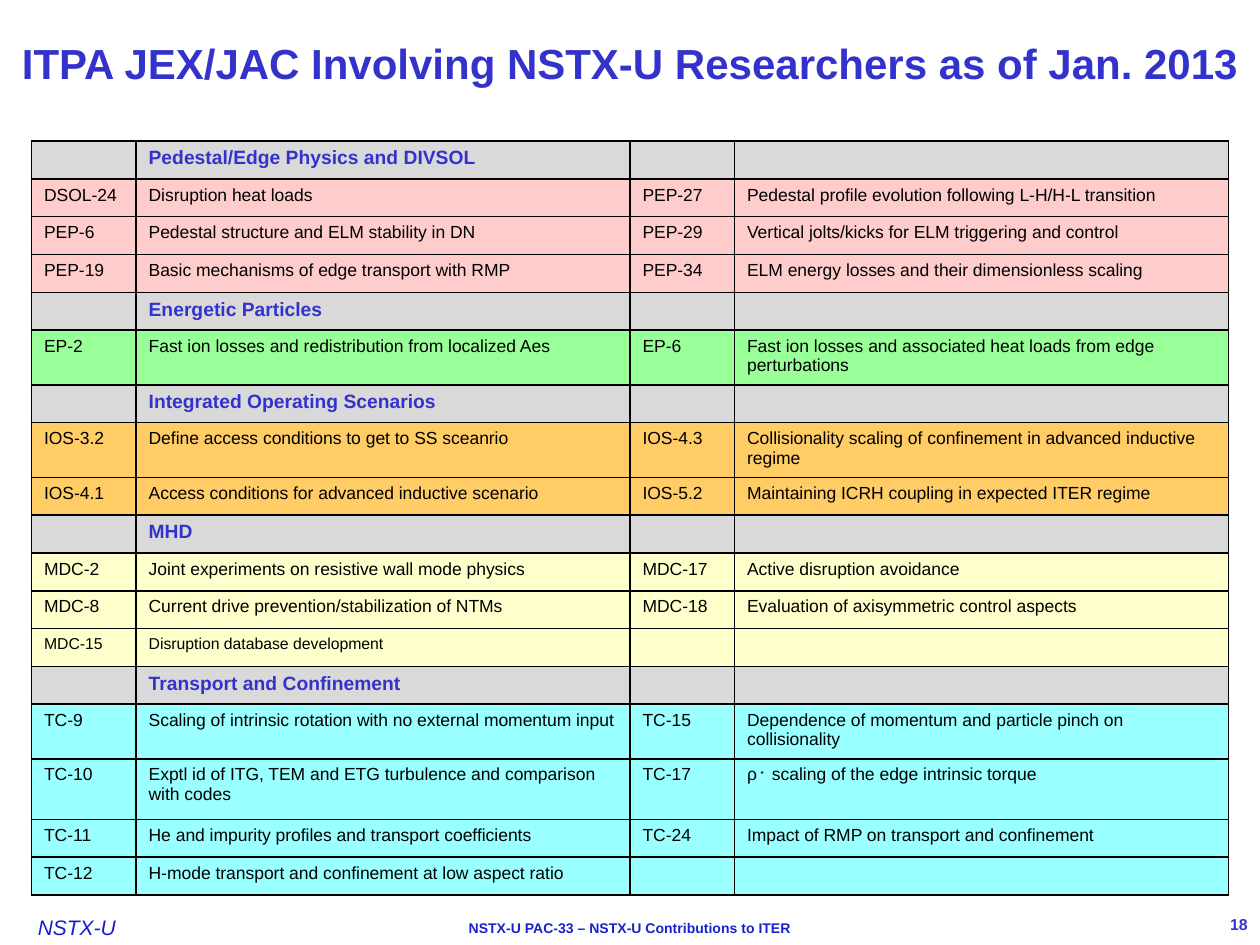
from dataclasses import dataclass

from lxml import etree
from pptx import Presentation
from pptx.dml.color import RGBColor
from pptx.enum import text
from pptx.oxml import ns
from pptx.util import Inches, Pt

FONT = "Arial"
BLACK = RGBColor(0x00, 0x00, 0x00)
HEADING_BLUE = RGBColor(0x33, 0x33, 0xCC)
LOGO_BLUE = RGBColor(0x17, 0x1F, 0xC7)
FOOTER_BLUE = RGBColor(0x18, 0x22, 0xCD)
GREY = RGBColor(0xD9, 0xD9, 0xD9)
PINK = RGBColor(0xFF, 0xCC, 0xCC)
GREEN = RGBColor(0x99, 0xFF, 0x99)
ORANGE = RGBColor(0xFF, 0xCC, 0x66)
YELLOW = RGBColor(0xFF, 0xFF, 0xCC)
CYAN = RGBColor(0x99, 0xFF, 0xFF)

COLUMN_WIDTHS = (0.83, 3.92, 0.83, 3.92)
ROW_HEIGHT = 0.3
TALL_ROWS = {"TC-10": 0.48}
SMALL_ROWS = {"MDC-15": 9}
SUPERSCRIPT = "∗"


@dataclass(frozen=True)
class Style:
    size: float
    color: RGBColor
    bold: bool = False
    italic: bool = False


@dataclass(frozen=True)
class Label:
    words: str
    left: float
    top: float
    width: float
    height: float
    style: Style
    align: text.PP_ALIGN = text.PP_ALIGN.LEFT
    anchor: text.MSO_ANCHOR = text.MSO_ANCHOR.TOP
    inset: bool = True


@dataclass(frozen=True)
class Topic:
    heading: str
    fill: RGBColor
    rows: tuple[tuple[str, str, str, str], ...]


HEADING = Style(11, HEADING_BLUE, bold=True)

LABELS = (
    Label("ITPA JEX/JAC Involving NSTX-U Researchers as of Jan. 2013", 0, 0, 10, 1,
          Style(24, HEADING_BLUE, bold=True), text.PP_ALIGN.CENTER, text.MSO_ANCHOR.MIDDLE),
    Label("NSTX-U", 0.3, 7.26, 0.87, 0.2, Style(12, LOGO_BLUE, italic=True), inset=False),
    Label("NSTX-U PAC-33 – NSTX-U Contributions to ITER", 2, 7.25, 6, 0.24,
          Style(8, FOOTER_BLUE, bold=True), text.PP_ALIGN.CENTER),
    Label("18", 9.17, 7.25, 0.83, 0.17, Style(9, HEADING_BLUE, bold=True),
          text.PP_ALIGN.RIGHT, text.MSO_ANCHOR.MIDDLE),
)

TOPICS = (
    Topic("Pedestal/Edge Physics and DIVSOL", PINK, (
        ("DSOL-24", "Disruption heat loads",
         "PEP-27", "Pedestal profile evolution following L-H/H-L transition"),
        ("PEP-6", "Pedestal structure and ELM stability in DN",
         "PEP-29", "Vertical jolts/kicks for ELM triggering and control"),
        ("PEP-19", "Basic mechanisms of edge transport with RMP",
         "PEP-34", "ELM energy losses and their dimensionless scaling"),
    )),
    Topic("Energetic Particles", GREEN, (
        ("EP-2", "Fast ion losses and redistribution from localized Aes",
         "EP-6", "Fast ion losses and associated heat loads from edge perturbations"),
    )),
    Topic("Integrated Operating Scenarios", ORANGE, (
        ("IOS-3.2", "Define access conditions to get to SS sceanrio",
         "IOS-4.3", "Collisionality scaling of confinement in advanced inductive regime"),
        ("IOS-4.1", "Access conditions for advanced inductive scenario",
         "IOS-5.2", "Maintaining ICRH coupling in expected ITER regime"),
    )),
    Topic("MHD", YELLOW, (
        ("MDC-2", "Joint experiments on resistive wall mode physics",
         "MDC-17", "Active disruption avoidance"),
        ("MDC-8", "Current drive prevention/stabilization of NTMs",
         "MDC-18", "Evaluation of axisymmetric control aspects"),
        ("MDC-15", "Disruption database development", "", ""),
    )),
    Topic("Transport and Confinement", CYAN, (
        ("TC-9", "Scaling of intrinsic rotation with no external momentum input",
         "TC-15", "Dependence of momentum and particle pinch on collisionality"),
        ("TC-10", "Exptl id of ITG, TEM and ETG turbulence and comparison with codes",
         "TC-17", "ρ∗ scaling of the edge intrinsic torque"),
        ("TC-11", "He and impurity profiles and transport coefficients",
         "TC-24", "Impact of RMP on transport and confinement"),
        ("TC-12", "H-mode transport and confinement at low aspect ratio", "", ""),
    )),
)


def write(para, words: str, style: Style) -> None:
    """Write one paragraph, raising any superscript sign."""
    before, sign, after = words.partition(SUPERSCRIPT)
    for part in filter(None, (before, sign, after)):
        span = para.add_run()
        span.text = part
        if part == SUPERSCRIPT:
            span.font._element.set("baseline", "30000")
    if not words:  # an empty cell must not stretch its row
        para._p.get_or_add_endParaRPr().set("sz", str(style.size * 100))
    font = para.font
    font.name, font.size = FONT, Pt(style.size)
    font.bold, font.italic = style.bold, style.italic
    font.color.rgb = style.color


def add_label(page, label: Label) -> None:
    box = page.shapes.add_textbox(Inches(label.left), Inches(label.top),
                                  Inches(label.width), Inches(label.height))
    frame = box.text_frame
    frame.word_wrap = True
    frame.vertical_anchor = label.anchor
    if not label.inset:
        frame.margin_left = frame.margin_right = frame.margin_top = frame.margin_bottom = 0
    para = frame.paragraphs[0]
    para.alignment = label.align
    write(para, label.words, label.style)


def add_borders(cell) -> None:
    """Put a thin black line on all four sides, ahead of the fill."""
    properties = cell._tc.get_or_add_tcPr()
    for place, side in enumerate(("lnL", "lnR", "lnT", "lnB")):
        line = etree.Element(ns.qn(f"a:{side}"), w=str(Pt(1)))
        fill = etree.SubElement(line, ns.qn("a:solidFill"))
        etree.SubElement(fill, ns.qn("a:srgbClr"), val=str(BLACK))
        properties.insert(place, line)


def fill_row(table, index: int, words: tuple[str, ...], style: Style, fill: RGBColor) -> None:
    table.rows[index].height = Inches(TALL_ROWS.get(words[0], ROW_HEIGHT))
    for cell, entry in zip(table.rows[index].cells, words):
        cell.fill.solid()
        cell.fill.fore_color.rgb = fill
        add_borders(cell)
        write(cell.text_frame.paragraphs[0], entry, style)


def add_topics(page, topics: tuple[Topic, ...]) -> None:
    lines = []
    for topic in topics:
        lines.append((("", topic.heading, "", ""), HEADING, GREY))
        for row in topic.rows:
            lines.append((row, Style(SMALL_ROWS.get(row[0], 10), BLACK), topic.fill))
    table = page.shapes.add_table(len(lines), len(COLUMN_WIDTHS), Inches(0.25), Inches(1.12),
                                  Inches(9.5), Inches(ROW_HEIGHT * len(lines))).table
    table.first_row = table.horz_banding = False
    for column, width in zip(table.columns, COLUMN_WIDTHS):
        column.width = Inches(width)
    for index, line in enumerate(lines):
        fill_row(table, index, *line)


def main() -> None:
    deck = Presentation()
    deck.slide_width, deck.slide_height = Inches(10), Inches(7.5)
    page = deck.slides.add_slide(deck.slide_layouts[6])

    # Title, footer and page number
    for label in LABELS:
        add_label(page, label)

    # Joint experiments by topic
    add_topics(page, TOPICS)

    deck.save("out.pptx")


if __name__ == "__main__":
    main()
